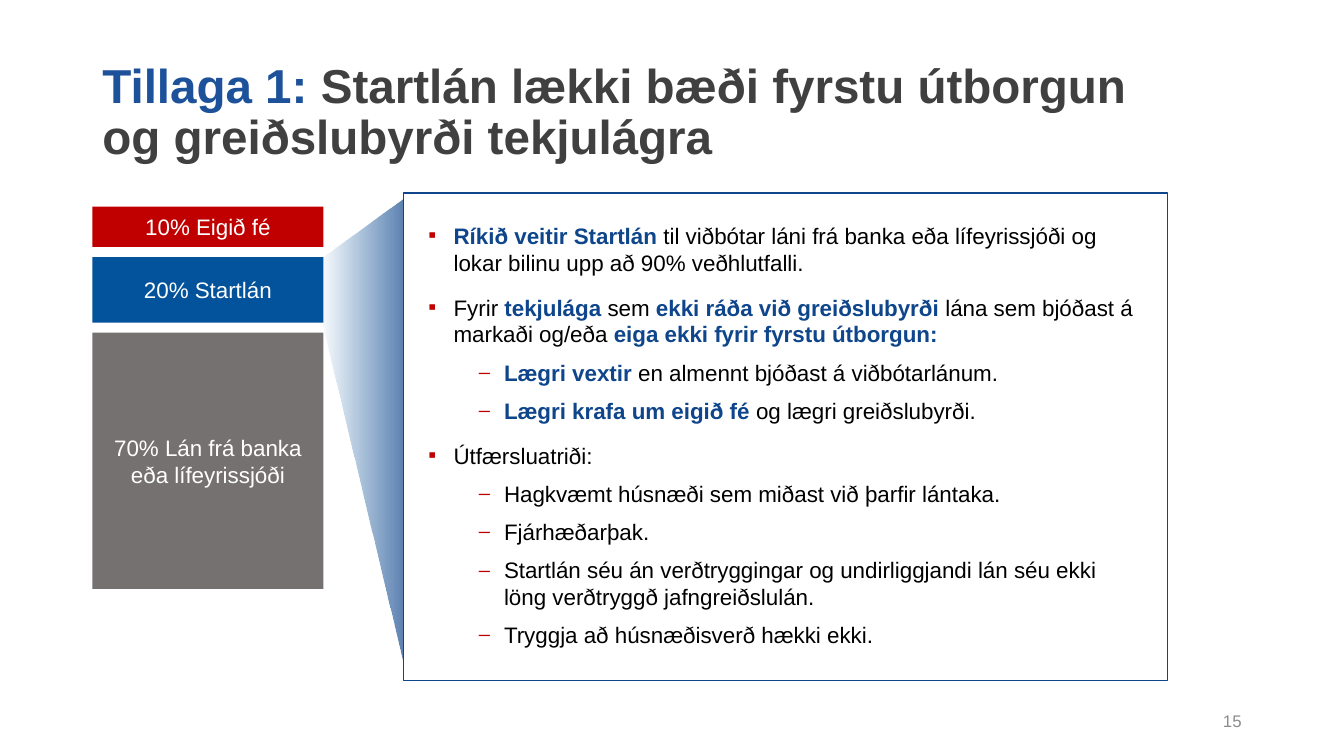
import pptx
import pptx.dml.color
import pptx.enum.shapes
import pptx.enum.text
import pptx.oxml.ns
import pptx.util
from lxml import etree

HUES = {"blue": "02529C", "navy": "0E458B", "head": "1D529B", "red": "C00000",
        "gray": "767171", "dark": "404040", "pale": "8C8C8C",
        "black": "000000", "white": "FFFFFF"}
COLS, ROWS = 160, 90
ALIGN = pptx.enum.text.PP_ALIGN
MID = pptx.enum.text.MSO_ANCHOR.MIDDLE

# Bullet, left margin in inches and space before, by list level
LEVELS = [("▪", 0.25, 10), ("⎯", 0.75, 5)]

# Level and text of each point; starred parts are bold
POINTS = [
    (0, "*Ríkið veitir Startlán *til viðbótar láni frá banka eða lífeyrissjóði og lokar bilinu upp að 90% veðhlutfalli."),
    (0, "Fyrir *tekjulága *sem *ekki ráða við greiðslubyrði *lána sem bjóðast á markaði og/eða *eiga ekki fyrir fyrstu útborgun:"),
    (1, "*Lægri vextir *en almennt bjóðast á viðbótarlánum."),
    (1, "*Lægri krafa um eigið fé *og lægri greiðslubyrði."),
    (0, "Útfærsluatriði:"),
    (1, "Hagkvæmt húsnæði sem miðast við þarfir lántaka."),
    (1, "Fjárhæðarþak."),
    (1, "Startlán séu án verðtryggingar og undirliggjandi lán séu ekki löng verðtryggð jafngreiðslulán."),
    (1, "Tryggja að húsnæðisverð hækki ekki."),
]

# Label, fill and height in rows of each loan part
PARTS = [("10% Eigið fé", "red", 4.8), ("20% Startlán", "blue", 7.8),
         ("70% Lán frá banka eða lífeyrissjóði", "gray", 30.5)]


def rgb(hue):
    return pptx.dml.color.RGBColor.from_string(HUES[hue])


def apply(item, **values):
    for key, value in values.items():
        setattr(item, key, value)


class Deck:
    def __init__(self, font="Arial"):
        self.font = font
        self.show = pptx.Presentation()
        apply(self.show, slide_width=pptx.util.Inches(13.333),
              slide_height=pptx.util.Inches(7.5))
        self.slide = self.show.slides.add_slide(self.show.slide_layouts[1])
        self.shapes = self.slide.shapes

    def col(self, count):
        return round(self.show.slide_width * count / COLS)

    def row(self, count):
        return round(self.show.slide_height * count / ROWS)

    def area(self, left, top, width, height):
        return self.col(left), self.row(top), self.col(width), self.row(height)

    def place(self, shape, *area):
        apply(shape, **dict(zip(("left", "top", "width", "height"), self.area(*area))))
        apply(shape.text_frame, word_wrap=True,
              auto_size=pptx.enum.text.MSO_AUTO_SIZE.NONE)

    def run(self, para, text, size, hue, bold=False):
        run = para.add_run()
        run.text = text
        apply(run.font, name=self.font, size=pptx.util.Pt(size), bold=bold)
        run.font.color.rgb = rgb(hue)

    def title(self, lead, lines, *area):
        shape = self.shapes.title
        self.place(shape, *area)
        shape.text_frame.vertical_anchor = MID
        para = shape.text_frame.paragraphs[0]
        apply(para, alignment=ALIGN.LEFT, line_spacing=0.9)
        self.run(para, lead, 34, "head", True)
        for index, line in enumerate(lines):
            if index:
                para.add_line_break()
            self.run(para, line, 34, "dark", True)

    def list(self, points, *area):
        shape = self.slide.placeholders[1]
        self.place(shape, *area)
        # Bring the text in front of the panel
        self.shapes.element.append(shape.element)
        frame = shape.text_frame
        for index, (level, text) in enumerate(points):
            para = frame.add_paragraph() if index else frame.paragraphs[0]
            mark, inset, before = LEVELS[level]
            apply(para, level=level, alignment=ALIGN.LEFT,
                  space_before=pptx.util.Pt(before), space_after=pptx.util.Pt(3))
            self.bullet(para, mark, inset)
            for turn, part in enumerate(text.split("*")):
                if part:
                    bold = turn % 2 == 1
                    self.run(para, part, 16, "navy" if bold else "black", bold)

    def bullet(self, para, mark, inset):
        props = para._p.get_or_add_pPr()
        props.set("marL", str(pptx.util.Inches(inset)))
        props.set("indent", str(pptx.util.Inches(-0.25)))
        qn = pptx.oxml.ns.qn
        tint = etree.SubElement(props, qn("a:buClr"))
        etree.SubElement(tint, qn("a:srgbClr"), val=HUES["red"])
        etree.SubElement(props, qn("a:buFont"), typeface=self.font)
        etree.SubElement(props, qn("a:buChar"), char=mark)

    def box(self, fill, *area, text="", line=None):
        kind = pptx.enum.shapes.MSO_SHAPE.RECTANGLE
        shape = self.shapes.add_shape(kind, *self.area(*area))
        shape.shadow.inherit = False
        shape.fill.solid()
        shape.fill.fore_color.rgb = rgb(fill)
        if line:
            shape.line.color.rgb = rgb(line)
            shape.line.width = pptx.util.Pt(1)
        else:
            shape.line.fill.background()
        if text:
            apply(shape.text_frame, word_wrap=True, vertical_anchor=MID)
            para = shape.text_frame.paragraphs[0]
            para.alignment = ALIGN.CENTER
            self.run(para, text, 16, "white")

    def beam(self, points, stops):
        spots = [(self.col(x), self.row(y)) for x, y in points]
        build = self.shapes.build_freeform(*spots[0])
        build.add_line_segments(spots[1:], close=True)
        shape = build.convert_to_shape()
        shape.shadow.inherit = False
        shape.line.fill.background()
        shape.fill.gradient()
        shape.fill.gradient_angle = 180
        for stop, (spot, hue, share) in zip(shape.fill.gradient_stops, stops):
            stop.position = spot
            stop.color.rgb = rgb(hue)
        tints = shape.element.xpath(".//a:gs/a:srgbClr")
        for tint, (spot, hue, share) in zip(tints, stops):
            etree.SubElement(tint, pptx.oxml.ns.qn("a:alpha"), val=str(share * 1000))

    def note(self, text, *area):
        shape = self.shapes.add_textbox(*self.area(*area))
        apply(shape.text_frame, word_wrap=True, vertical_anchor=MID)
        para = shape.text_frame.paragraphs[0]
        para.alignment = ALIGN.RIGHT
        self.run(para, text, 12, "pale")


def main():
    deck = Deck()
    deck.title("Tillaga 1:", [" Startlán lækki bæði fyrstu útborgun ",
                              "og greiðslubyrði tekjulágra"], 11, 4.8, 138, 17.4)

    # Beam that opens from the middle part to the panel
    deck.beam([(38, 31), (48.5, 23.3), (48.4, 80.6), (38.2, 37.8)],
              [(0, "navy", 71), (1, "blue", 0)])

    # Stack of loan parts
    top, gap = 24.6, 1.2
    for text, fill, height in PARTS:
        deck.box(fill, 11, top, 27.5, height, text=text)
        top += height + gap

    # Panel with the points
    deck.box("white", 48, 23, 91, 58, line="navy")
    deck.list(POINTS, 49.8, 25.8, 86.9, 57.1)

    # Page number
    deck.note("15", 113, 83.4, 36, 4.8)
    deck.show.save("out.pptx")


if __name__ == "__main__":
    main()
